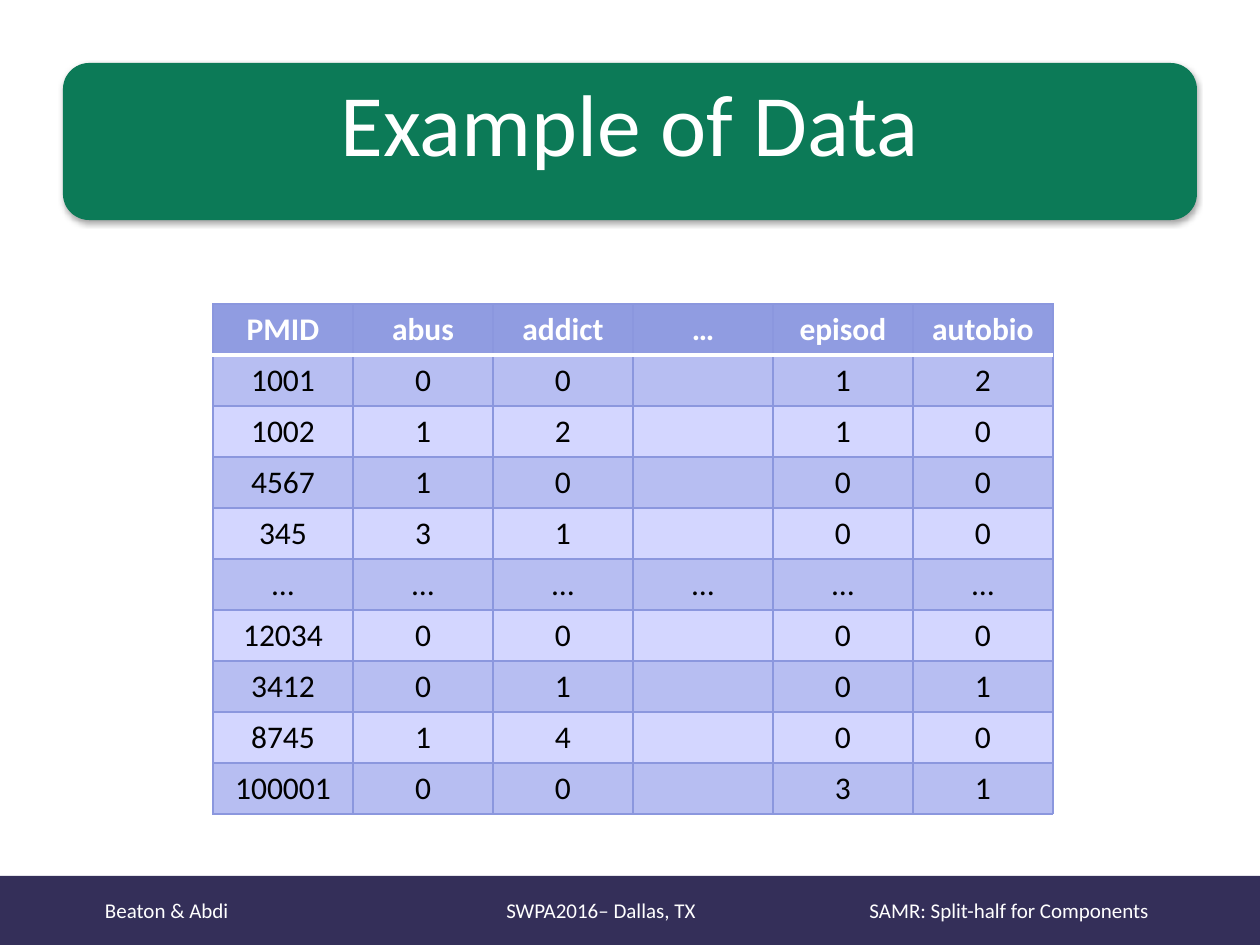
from lxml.etree import SubElement
from pptx import Presentation
from pptx.dml.color import RGBColor
from pptx.enum.shapes import MSO_SHAPE
from pptx.enum.text import MSO_ANCHOR, PP_ALIGN
from pptx.oxml import parse_xml
from pptx.oxml.ns import nsdecls, qn
from pptx.util import Pt

PX = 914400 // 126  # one px in EMU
WHITE = RGBColor(0xFF, 0xFF, 0xFF)
BLACK = RGBColor(0, 0, 0)
GREEN = RGBColor(0x0C, 0x7A, 0x57)
NAVY = RGBColor(0x34, 0x2F, 0x59)
HEAD = RGBColor(0x90, 0x9C, 0xE1)
BANDS = [RGBColor(0xD3, 0xD6, 0xFF), RGBColor(0xB7, 0xBE, 0xF2)]
EDGE = RGBColor(0x8B, 0x97, 0xDE)


def write(frame, text, color, size, bold=False, align=PP_ALIGN.CENTER):
    para = frame.paragraphs[0]
    para.alignment = align
    run = para.add_run()
    run.text = text
    run.font.color.rgb = color
    style = {"name": "Calibri", "size": Pt(size), "bold": bold}
    for key, val in style.items():
        setattr(run.font, key, val)
    return para


def edge(cell, side, color, width):
    line = SubElement(cell._tc.get_or_add_tcPr(), qn("a:" + side), w=str(Pt(width)))
    fill = SubElement(line, qn("a:solidFill"))
    SubElement(fill, qn("a:srgbClr"), val=str(color))


deck = Presentation()
deck.slide_width, deck.slide_height = 1260 * PX, 945 * PX
slide = deck.slides.add_slide(deck.slide_layouts[6])
shapes = slide.shapes

# Banner and footer bar
bars = []
for kind, color, box in [
    (MSO_SHAPE.ROUNDED_RECTANGLE, GREEN, (63, 63, 1134, 157)),
    (MSO_SHAPE.RECTANGLE, NAVY, (0, 876, 1260, 69)),
]:
    bar = shapes.add_shape(kind, *[n * PX for n in box])
    bar.shadow.inherit = False
    bar.fill.solid()
    bar.fill.fore_color.rgb = color
    bar.line.fill.background()
    bars.append(bar)
banner, footer = bars

# Soft shadow below the banner
glow = banner._element.spPr.find(qn("a:effectLst"))
glow.append(parse_xml(
    f'<a:outerShdw {nsdecls("a")} blurRad="{Pt(3.1)}" dist="{Pt(1.8)}" dir="5400000"'
    ' rotWithShape="0"><a:srgbClr val="000000"><a:alpha val="35000"/></a:srgbClr>'
    '</a:outerShdw>'))

# Title
title = shapes.add_textbox(63 * PX, 63 * PX, 1134 * PX, 157 * PX).text_frame
title.word_wrap = True
write(title, "Example of Data", WHITE, 50)

# Footer text: left, centre and right on tab stops
frame = footer.text_frame
layout = {"margin_left": 105 * PX, "margin_right": 90 * PX,
          "vertical_anchor": MSO_ANCHOR.MIDDLE, "word_wrap": True}
for key, val in layout.items():
    setattr(frame, key, val)
para = write(frame, "Beaton & Abdi\tSWPA2016– Dallas, TX\tSAMR: Split-half for Components",
             WHITE, 12, align=PP_ALIGN.LEFT)
tabs = SubElement(para._p.get_or_add_pPr(), qn("a:tabLst"))
for pos, algn in [(496, "ctr"), (1044, "r")]:
    SubElement(tabs, qn("a:tab"), pos=str(pos * PX), algn=algn)

# Data table
rows = [
    ["PMID", "abus", "addict", "…", "episod", "autobio"],
    ["1001", "0", "0", "", "1", "2"],
    ["1002", "1", "2", "", "1", "0"],
    ["4567", "1", "0", "", "0", "0"],
    ["345", "3", "1", "", "0", "0"],
    ["…"] * 6,
    ["12034", "0", "0", "", "0", "0"],
    ["3412", "0", "1", "", "0", "1"],
    ["8745", "1", "4", "", "0", "0"],
    ["100001", "0", "0", "", "3", "1"],
]
table = shapes.add_table(len(rows), 6, 213 * PX, 304 * PX, 840 * PX, 510 * PX).table
for r, row in enumerate(rows):
    table.rows[r].height = 51 * PX
    for c, text in enumerate(row):
        cell = table.cell(r, c)
        for side in ("lnL", "lnR", "lnT", "lnB"):
            rule = (r, side) in [(0, "lnB"), (1, "lnT")]
            edge(cell, side, *((WHITE, 2) if rule else (EDGE, 0.75)))
        cell.fill.solid()
        cell.fill.fore_color.rgb = BANDS[r % 2] if r else HEAD
        if text:
            write(cell.text_frame, text, BLACK if r else WHITE, 18, bold=r == 0)

deck.save("out.pptx")
